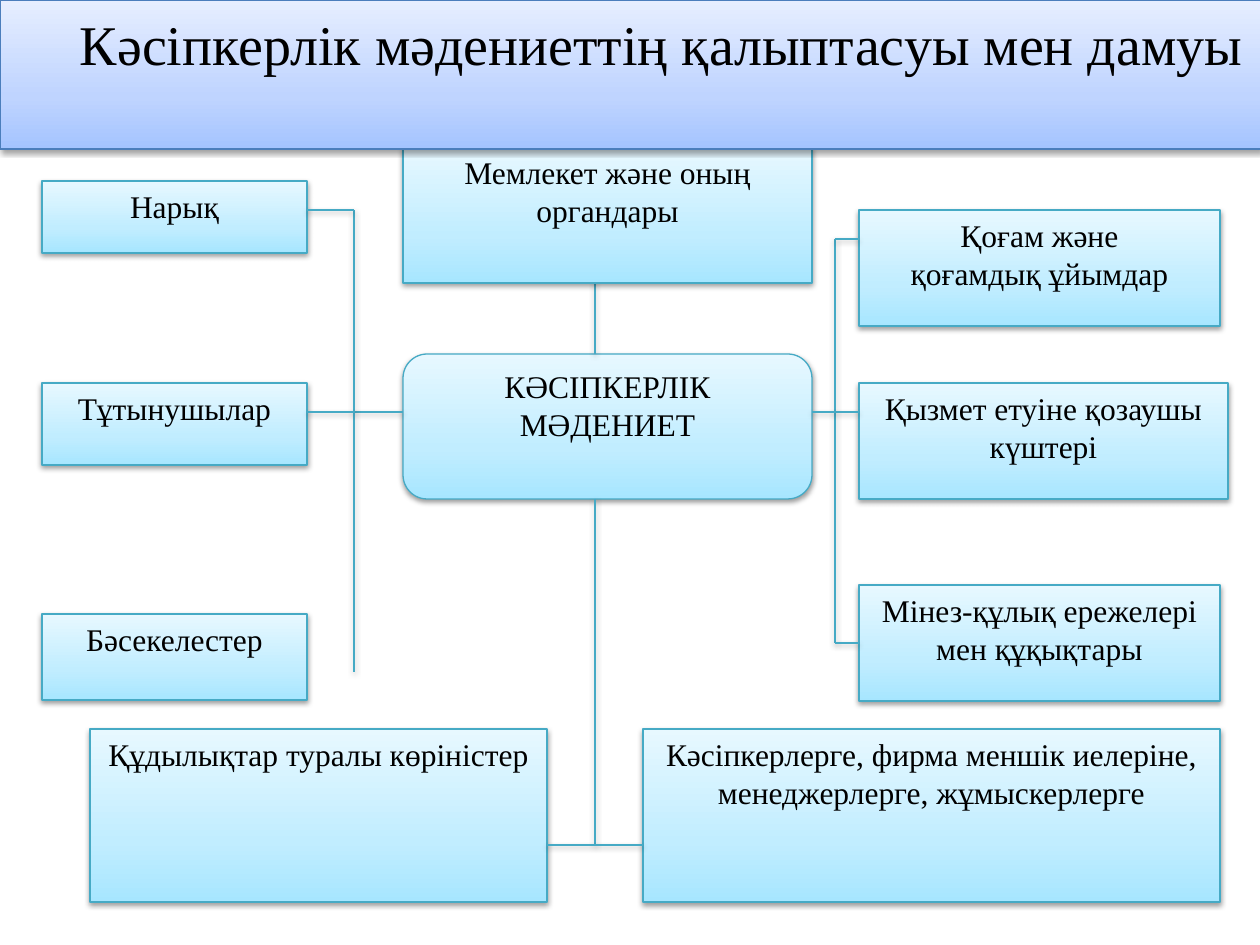
import copy
from dataclasses import dataclass

import pptx
import pptx.dml.color
import pptx.enum.shapes
import pptx.enum.text
import pptx.oxml
import pptx.oxml.ns
import pptx.util
from lxml import etree

RGB = pptx.dml.color.RGBColor
SHAPE = pptx.enum.shapes.MSO_SHAPE
PX = 914400 / 126

BLACK = RGB(0x00, 0x00, 0x00)
TEAL_LINE = RGB(0x46, 0xAA, 0xC5)
BLUE_LINE = RGB(0x4B, 0x7E, 0xBC)
# Gradients run from the bottom edge to the top edge
TEAL = (RGB(0xA7, 0xE6, 0xFF), RGB(0xC1, 0xED, 0xFF), RGB(0xE7, 0xF8, 0xFF))
BLUE = (RGB(0xA4, 0xC4, 0xFF), RGB(0xBF, 0xD4, 0xFF), RGB(0xE6, 0xEE, 0xFF))
STOPS = (0, 0.35, 1)

SHADOW = (
    f'<a:outerShdw {pptx.oxml.ns.nsdecls("a")} blurRad="40000" dist="20000" '
    'dir="5400000" rotWithShape="0"><a:srgbClr val="000000">'
    '<a:alpha val="38000"/></a:srgbClr></a:outerShdw>'
)


@dataclass
class Box:
    text: str
    x: int
    y: int
    w: int
    h: int
    shape: SHAPE = SHAPE.RECTANGLE
    colors: tuple = TEAL
    line: RGB = TEAL_LINE
    size: int = 18


@dataclass
class Link:
    x1: int
    y1: int
    x2: int
    y2: int


def px(n: int) -> int:
    return round(n * PX)


def add_shadow(sp_pr) -> None:
    effects = sp_pr.find(pptx.oxml.ns.qn("a:effectLst"))
    if effects is None:
        effects = etree.SubElement(sp_pr, pptx.oxml.ns.qn("a:effectLst"))
    effects.append(pptx.oxml.parse_xml(SHADOW))


def fill_gradient(sp, colors: tuple) -> None:
    sp.fill.gradient()
    sp.fill.gradient_angle = 90
    gs_list = sp._element.spPr.find(".//" + pptx.oxml.ns.qn("a:gsLst"))
    gs_list.insert(1, copy.deepcopy(gs_list[0]))
    for stop, position, color in zip(sp.fill.gradient_stops, STOPS, colors):
        stop.position = position
        stop.color.rgb = color


def draw_box(s, box: Box):
    sp = s.shapes.add_shape(box.shape, px(box.x), px(box.y), px(box.w), px(box.h))
    fill_gradient(sp, box.colors)
    sp.line.color.rgb = box.line
    sp.line.width = pptx.util.Pt(0.75)
    sp.shadow.inherit = False
    add_shadow(sp._element.spPr)
    tf = sp.text_frame
    tf.word_wrap = True
    tf.vertical_anchor = pptx.enum.text.MSO_ANCHOR.TOP
    tf.text = box.text
    for p in tf.paragraphs:
        p.alignment = pptx.enum.text.PP_ALIGN.CENTER
        for r in p.runs:
            r.font.name = "Times New Roman"
            r.font.size = pptx.util.Pt(box.size)
            r.font.color.rgb = BLACK
    return sp


def draw_link(s, link: Link):
    line = s.shapes.add_connector(
        pptx.enum.shapes.MSO_CONNECTOR.STRAIGHT,
        px(link.x1), px(link.y1), px(link.x2), px(link.y2),
    )
    line.line.color.rgb = TEAL_LINE
    line.line.width = pptx.util.Pt(0.75)
    add_shadow(line._element.spPr)
    return line


# Column edges and shared connector positions
LEFT, LEFT_W = 42, 265
MID, MID_W = 403, 409
RIGHT, RIGHT_W = 859, 361
LEFT_BUS, MID_BUS, RIGHT_BUS = 354, 595, 835
AXIS, BASE = 412, 845

RULES = Box("Мінез-құлық ережелері мен құқықтары", RIGHT, 585, RIGHT_W, 116)
BOXES = [
    Box("Нарық", LEFT, 181, LEFT_W, 72),
    Box("Тұтынушылар", LEFT, 383, LEFT_W, 82),
    Box("Бәсекелестер", LEFT, 614, LEFT_W, 86),
    Box("Қоғам және\nқоғамдық ұйымдар", RIGHT, 210, RIGHT_W, 116),
    Box("Құдылықтар туралы көріністер", 90, 729, 457, 173),
    Box("Қызмет етуіне қозаушы күштері", RIGHT, 383, 369, 116),
    Box("Кәсіпкерлерге, фирма меншік иелеріне, менеджерлерге, жұмыскерлерге",
        643, 729, 577, 173),
    Box("КӘСІПКЕРЛІК МӘДЕНИЕТ", MID, 354, MID_W, 145,
        SHAPE.FLOWCHART_ALTERNATE_PROCESS),
]
LINKS = [
    Link(MID_BUS, 210, MID_BUS, 354),
    Link(MID, AXIS, LEFT_BUS, AXIS),
    Link(LEFT_BUS, 210, LEFT_BUS, 672),
    Link(LEFT_BUS, 210, LEFT + LEFT_W, 210),
    Link(LEFT_BUS, AXIS, LEFT + LEFT_W, AXIS),
    Link(RIGHT_BUS, 239, RIGHT_BUS, 643),
    Link(RIGHT_BUS, 239, RIGHT, 239),
    Link(RIGHT_BUS, AXIS, RIGHT, AXIS),
    Link(MID_BUS, 499, MID_BUS, BASE),
    Link(547, BASE, 643, BASE),
    Link(MID + MID_W, AXIS, RIGHT_BUS, AXIS),
]
STATE = Box("Мемлекет және оның органдары", MID, 147, MID_W, 136)
TITLE = Box("Кәсіпкерлік мәдениеттің қалыптасуы мен дамуы", 0, 0, 1262, 149,
            colors=BLUE, line=BLUE_LINE, size=32)


def main() -> None:
    prs = pptx.Presentation()
    prs.slide_width, prs.slide_height = px(1260), px(945)
    s = prs.slides.add_slide(prs.slide_layouts[6])

    # Factors around the central concept
    for box in BOXES:
        draw_box(s, box)
    rules = draw_box(s, RULES)

    # Connecting lines
    for link in LINKS:
        draw_link(s, link)
    draw_link(s, Link(RIGHT_BUS, 643, RIGHT, 643)).end_connect(rules, 1)

    # State box, partly covered by the title band
    draw_box(s, STATE)
    tf = draw_box(s, TITLE).text_frame
    tf.margin_top = px(10)
    tf.paragraphs[0]._p.get_or_add_pPr().set("indent", str(px(62)))

    prs.save("out.pptx")


if __name__ == "__main__":
    main()
